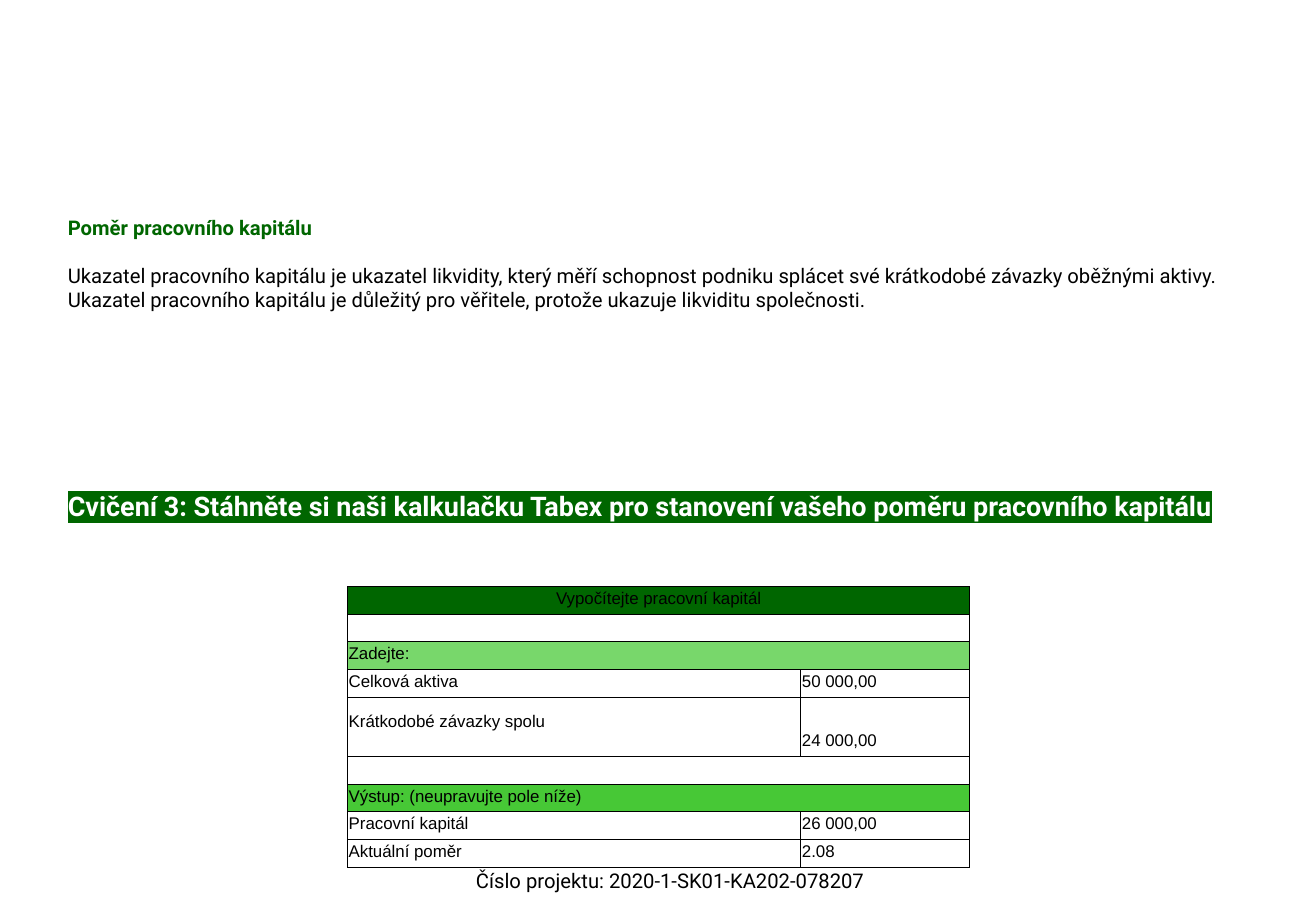
import lxml.etree
import pptx
import pptx.dml.color
import pptx.enum.text
import pptx.oxml.ns
import pptx.util

Inches = pptx.util.Inches
Pt = pptx.util.Pt
qn = pptx.oxml.ns.qn
ALIGN = pptx.enum.text.PP_ALIGN
ANCHOR = pptx.enum.text.MSO_ANCHOR

DARK_GREEN = "006600"
INPUT_GREEN = "78D76B"
OUTPUT_GREEN = "47C836"
BLACK = "000000"
WHITE = "FFFFFF"

# Text of each column, fill; a row with one text spans both columns.
CALCULATOR_ROWS = [
    (["Vypočítejte pracovní kapitál"], DARK_GREEN),
    ([""], None),
    (["Zadejte:"], INPUT_GREEN),
    (["Celková aktiva", "50 000,00"], None),
    (["Krátkodobé závazky spolu", "24 000,00"], None),
    ([""], None),
    (["Výstup: (neupravujte pole níže)"], OUTPUT_GREEN),
    (["Pracovní kapitál", "26 000,00"], None),
    (["Aktuální poměr", "2.08"], None),
]
LIABILITIES_ROW = 4


def rgb(value):
    return pptx.dml.color.RGBColor.from_string(value)


def style(paragraph, font_name, size, color, bold=False):
    for run in paragraph.runs:
        run.font.name = font_name
        run.font.size = Pt(size)
        run.font.bold = bold
        run.font.color.rgb = rgb(color)


def add_text_frame(slide, left, top, width, height, wrap=True):
    box = slide.shapes.add_textbox(
        Inches(left), Inches(top), Inches(width), Inches(height))
    box.text_frame.word_wrap = wrap
    return box.text_frame


def highlight(run, color):
    mark = lxml.etree.Element(qn("a:highlight"))
    lxml.etree.SubElement(mark, qn("a:srgbClr"), val=color)
    run.font.fill._xPr.find(qn("a:solidFill")).addnext(mark)


def add_introduction(slide, left, top, width, height):
    frame = add_text_frame(slide, left, top, width, height)
    heading = frame.paragraphs[0]
    heading.text = "Poměr pracovního kapitálu"
    style(heading, "Roboto", 12, DARK_GREEN, bold=True)
    explanation = frame.add_paragraph()
    explanation.text = (
        "Ukazatel pracovního kapitálu je ukazatel likvidity, který měří "
        "schopnost podniku splácet své krátkodobé závazky oběžnými aktivy. "
        "Ukazatel pracovního kapitálu je důležitý pro věřitele, protože "
        "ukazuje likviditu společnosti.")
    explanation.space_before = Pt(14)
    style(explanation, "Roboto", 12, BLACK)


def add_exercise_title(slide, left, top, width, height):
    title = add_text_frame(slide, left, top, width, height).paragraphs[0]
    title.text = ("Cvičení 3: Stáhněte si naši kalkulačku Tabex pro "
                  "stanovení vašeho poměru pracovního kapitálu")
    style(title, "Roboto", 16, WHITE, bold=True)
    highlight(title.runs[0], DARK_GREEN)


def add_project_number(slide, left, top, width, height):
    frame = add_text_frame(slide, left, top, width, height, wrap=False)
    number = frame.paragraphs[0]
    number.text = "Číslo projektu: 2020-1-SK01-KA202-078207"
    number.alignment = ALIGN.CENTER
    style(number, "Roboto", 12, BLACK)


def format_cell(cell, fill):
    """Set the margins, fill and thin black borders of a cell."""
    cell.margin_left = cell.margin_right = cell.margin_top = Inches(0.01)
    cell.margin_bottom = Inches(0.05)
    cell.vertical_anchor = ANCHOR.BOTTOM
    properties = cell._tc.get_or_add_tcPr()
    for side in ("a:lnL", "a:lnR", "a:lnT", "a:lnB"):
        border = lxml.etree.SubElement(properties, qn(side), w=str(Pt(0.5)))
        solid = lxml.etree.SubElement(border, qn("a:solidFill"))
        lxml.etree.SubElement(solid, qn("a:srgbClr"), val=BLACK)
    if fill:
        cell.fill.solid()
        cell.fill.fore_color.rgb = rgb(fill)
    else:
        cell.fill.background()


def write_cell(cell, text):
    paragraph = cell.text_frame.paragraphs[0]
    if text:
        paragraph.text = text
        style(paragraph, "Arial", 10, BLACK)
    else:
        # Keeps the row of an empty cell low.
        lxml.etree.SubElement(paragraph._p, qn("a:endParaRPr"), sz="1000")


def add_calculator(slide, left, top, width, height):
    value_width = 1.39
    liabilities_height = 0.49
    row_height = (height - liabilities_height) / (len(CALCULATOR_ROWS) - 1)
    table = slide.shapes.add_table(
        len(CALCULATOR_ROWS), 2, Inches(left), Inches(top),
        Inches(width), Inches(height)).table
    table.first_row = table.horz_banding = False
    table.columns[0].width = Inches(width - value_width)
    table.columns[1].width = Inches(value_width)
    for index, (texts, fill) in enumerate(CALCULATOR_ROWS):
        table.rows[index].height = Inches(row_height)
        cells = [table.cell(index, column) for column in range(2)]
        for cell in cells:
            format_cell(cell, fill)
            write_cell(cell, "")
        if len(texts) == 1:
            cells[0].merge(cells[1])
        for cell, text in zip(cells, texts):
            if text:
                write_cell(cell, text)
    table.rows[LIABILITIES_ROW].height = Inches(liabilities_height)
    table.cell(LIABILITIES_ROW, 0).margin_bottom = Inches(0.21)
    table.cell(0, 0).text_frame.paragraphs[0].alignment = ALIGN.CENTER


def main():
    presentation = pptx.Presentation()
    presentation.slide_width = Inches(10.83)
    presentation.slide_height = Inches(7.5)
    slide = presentation.slides.add_slide(presentation.slide_layouts[6])
    add_project_number(slide, 3.74, 7.1, 3.55, 0.3)
    add_introduction(slide, 0.46, 1.72, 9.92, 0.91)
    add_exercise_title(slide, 0.46, 3.98, 9.92, 0.37)
    add_calculator(slide, 2.86, 4.83, 5.12, 2.28)
    presentation.save("out.pptx")


if __name__ == "__main__":
    main()
